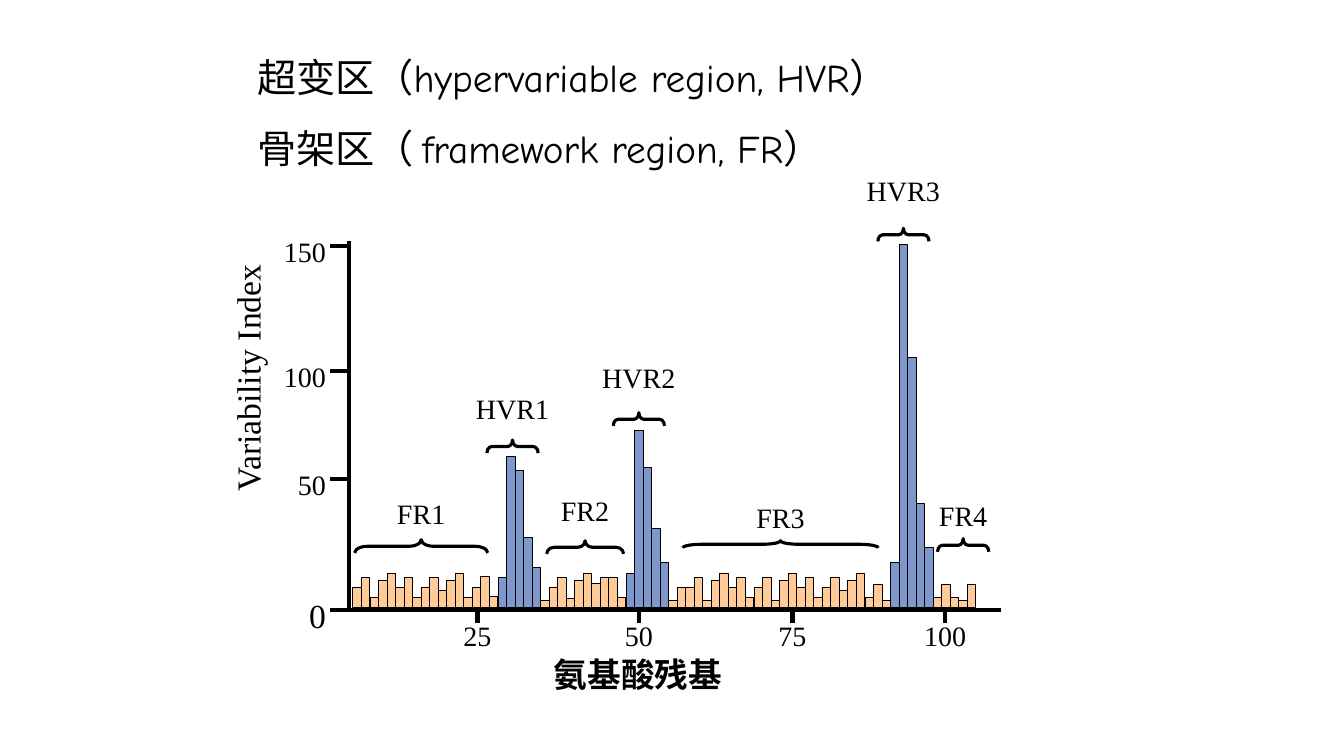
from lxml.etree import SubElement as Sub
from pptx import Presentation
from pptx.dml.color import RGBColor
from pptx.enum.shapes import MSO_CONNECTOR as Wire, MSO_SHAPE as Form
from pptx.enum.text import MSO_ANCHOR as Anchor, PP_ALIGN as Align
from pptx.oxml.ns import qn
from pptx.util import Inches, Pt

WIDE, HIGH = Inches(13.33), Inches(7.5)
COL = WIDE * 0.00635  # one residue bar
ROW = HIGH / 75
LEFT, BASE = WIDE * 0.2626, HIGH * 0.804

BLACK = RGBColor(0, 0, 0)
ORANGE = RGBColor(0xFF, 0x99, 0x33)
BLUE = RGBColor(0x00, 0x33, 0x99)
SERIF, COMIC, HAN = "Times New Roman", "Comic Neue", "Noto Sans CJK JP"
AXIS = -0.2  # row of the horizontal axis

# name, bar heights in rows, brace middle column, brace span, brace depth,
# brace row, label row
REGIONS = [
    ("FR1", [2, 3, 1, 2.7, 3.4, 2, 3, 1, 2, 3, 1.7, 2.7, 3.4, 1, 2, 3.1, 1.1],
     8, 15.6, 1.3, 6.1, 9.35),
    ("HVR1", [3, 15, 13.6, 7, 4], 18.7, 6, 1.3, 16, 19.75),
    ("FR2", [0.7, 2, 3, 0.9, 2.7, 3.4, 2.4, 3, 3, 1],
     27.2, 9, 1.3, 6, 9.65),
    ("HVR2", [3.4, 17.6, 13.9, 7.9, 4.5], 33.5, 6, 1.3, 18.7, 22.9),
    ("FR3", [0.7, 2, 2, 3, 0.7, 2.7, 3.4, 2, 3, 1, 2, 3, 0.7, 2.7, 3.4, 2, 3,
             1, 2, 3, 1.7, 2.7, 3.4, 1, 2.3, 0.7],
     50.1, 22.9, 0.7, 6.3, 9),
    ("HVR3", [4.5, 36, 24.8, 10.3, 6], 64.5, 6, 1.3, 37, 41.45),
    ("FR4", [1, 2.3, 1, 0.7, 2.3], 71.5, 6, 1.3, 6.2, 9.2),
]
RESIDUES = [("25", 14.6), ("50", 33.5), ("75", 51.5), ("100", 69.4)]
INDEX = [("150", 35.9, 20), ("100", 23.5, 20), ("50", 12.8, 20),
         ("0", AXIS, 24)]


def spot(col, row):
    """Slide point of a column and a row counted up from the bars' base."""
    return int(LEFT + col * COL), int(BASE - row * ROW)


def box(col, row, wide, high):
    """Frame of a size in EMU, centred on a grid point."""
    x, y = spot(col, row)
    return int(x - wide / 2), int(y - high / 2), int(wide), int(high)


def text(slide, words, col, row, cols=14, rows=4.3, size=20, font=SERIF,
         bold=False, align=Align.CENTER, turn=0):
    item = slide.shapes.add_textbox(*box(col, row, cols * COL, rows * ROW))
    item.rotation = turn
    frame = item.text_frame
    frame.word_wrap = True
    frame.vertical_anchor = Anchor.MIDDLE
    para = frame.paragraphs[0]
    para.alignment = align
    run = para.add_run()
    run.text = words
    face = run.font
    face.name, face.size, face.bold = font, Pt(size), bold
    face.color.rgb = BLACK
    Sub(run._r.get_or_add_rPr(), qn("a:ea"), typeface=HAN)


def line(slide, start, end):
    item = slide.shapes.add_connector(Wire.STRAIGHT, *spot(*start),
                                      *spot(*end))
    item.line.color.rgb = BLACK
    item.line.width = Pt(3)
    Sub(item._element.spPr, qn("a:effectLst"))


def bar(slide, col, rows, color):
    x, y = spot(col, rows)
    item = slide.shapes.add_shape(Form.RECTANGLE, x, y, int(COL),
                                  int(rows * ROW))
    item.shadow.inherit = False
    item.fill.solid()
    item.fill.fore_color.rgb = color
    tint = item._element.spPr.find(qn("a:solidFill"))[0]
    Sub(tint, qn("a:alpha"), val="50000")
    item.line.color.rgb = BLACK
    item.line.width = Pt(0.75)


def brace(slide, col, row, span, depth):
    """Brace over a span of columns, its point upwards."""
    wide, high = depth * ROW, span * COL
    item = slide.shapes.add_shape(Form.LEFT_BRACE, *box(col, row, wide, high))
    item.rotation = 90
    item.adjustments[0] = 0.095 * high / wide
    item.shadow.inherit = False
    item.fill.background()
    item.line.color.rgb = BLACK
    item.line.width = Pt(2.25)


def plot(slide):
    col = 0
    for name, bars, mid, span, depth, level, top in REGIONS:
        color = BLUE if name.startswith("HVR") else ORANGE
        for rows in bars:
            bar(slide, col, rows, color)
            col += 1
        brace(slide, mid, level, span, depth)
        text(slide, name, mid, top)


def axes(slide):
    line(slide, (-0.6, AXIS), (75.9, AXIS))
    line(slide, (-0.5, -0.4), (-0.5, 36.4))
    for name, col in RESIDUES:
        line(slide, (col, AXIS), (col, -1.5))
        text(slide, name, col, -2.7)
    for name, row, size in INDEX:
        line(slide, (-2.7, row), (-0.7, row))
        text(slide, name, -6, row - 0.5, cols=8, size=size, align=Align.RIGHT)
    text(slide, "Variability Index", -12.4, 22.8, cols=37, rows=5, size=24,
         turn=270)
    text(slide, "氨基酸残基", 33.4, -6.6, cols=29, rows=5, size=24,
         font=HAN, bold=True)


def main():
    deck = Presentation()
    deck.slide_width, deck.slide_height = WIDE, HIGH
    slide = deck.slides.add_slide(deck.slide_layouts[6])
    plot(slide)
    axes(slide)
    heads = [("超变区（hypervariable region, HVR）", 52.7),
             ("骨架区（ framework region, FR）", 45.6)]
    for words, row in heads:
        text(slide, words, 29.9, row, cols=84.6, rows=6, size=28, font=COMIC,
             align=Align.LEFT)
    deck.save("out.pptx")


if __name__ == "__main__":
    main()
